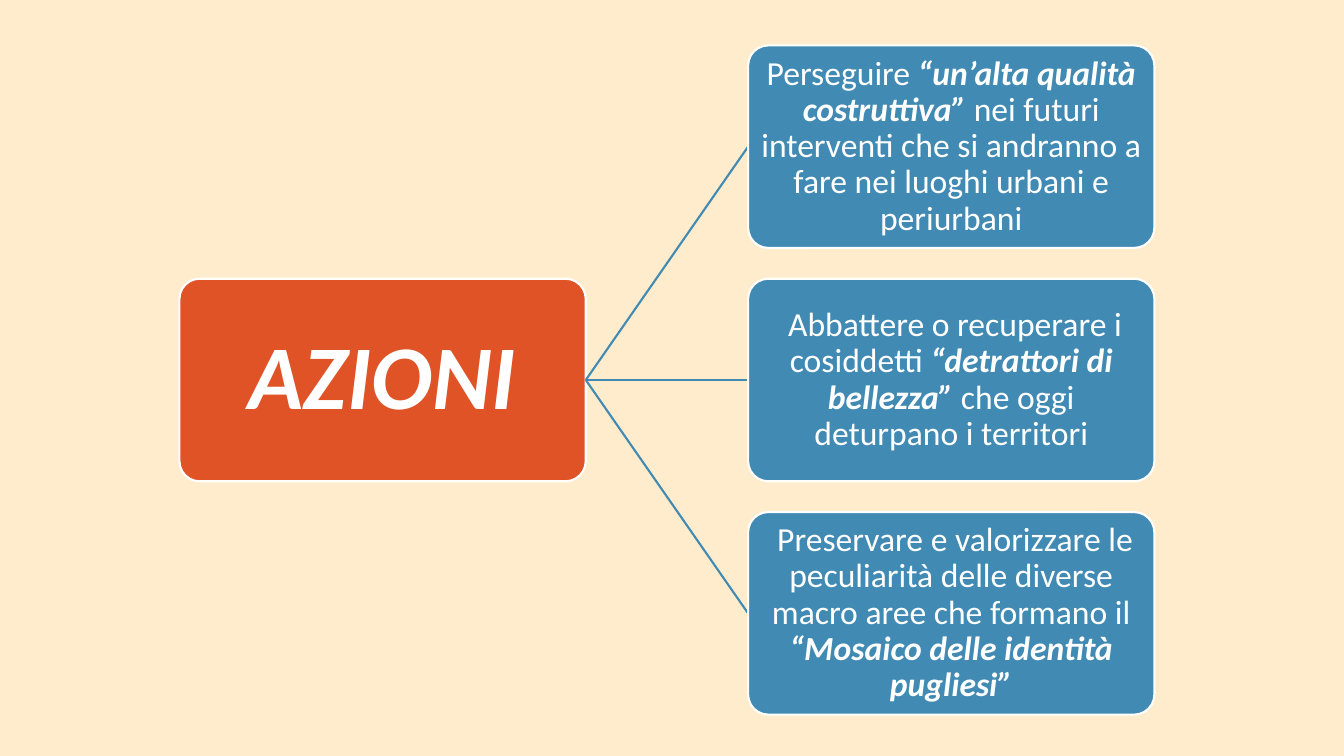
from dataclasses import dataclass

from lxml.etree import SubElement
from pptx import Presentation
from pptx.dml.color import RGBColor
from pptx.enum.shapes import MSO_CONNECTOR, MSO_SHAPE
from pptx.enum.text import MSO_ANCHOR, PP_ALIGN
from pptx.oxml.ns import qn
from pptx.shapes.autoshape import Shape
from pptx.shapes.connector import Connector
from pptx.util import Inches, Pt

CREAM, ORANGE, BLUE, WHITE = "FFECCC", "DF5327", "418AB3", "FFFFFF"
WIDTH, HEIGHT = 4.03, 2.01
LEFT, RIGHT = 1.78, 7.42
TOP, PITCH = 0.45, 2.315
MIDDLE = TOP + PITCH


@dataclass
class Box:
    left: float
    top: float
    fill: str
    inset: float = 0.02


@dataclass
class Action:
    before: str
    strong: str
    after: str = ""


ACTIONS = [
    Action("Perseguire ", "“un’alta qualità costruttiva” ",
           "nei futuri interventi che si andranno a fare nei luoghi urbani e periurbani"),
    Action(" Abbattere o recuperare i cosiddetti ", "“detrattori di bellezza” ",
           "che oggi deturpano i territori"),
    Action(" Preservare e valorizzare le peculiarità delle diverse macro aree che formano il ",
           "“Mosaico delle identità pugliesi”"),
]


def color(code: str) -> RGBColor:
    return RGBColor.from_string(code)


def write(shape: Shape, text: str, *, size: float = 24, strong: bool = False) -> None:
    """Append a run to the shape's only paragraph."""
    run = shape.text_frame.paragraphs[0].add_run()
    run.text = text
    font = run.font
    font.name, font.size = "Calibri", Pt(size)
    font.bold = font.italic = strong
    font.color.rgb = color(WHITE)


def draw_box(box: Box) -> Shape:
    shape = slide.shapes.add_shape(
        MSO_SHAPE.ROUNDED_RECTANGLE, Inches(box.left), Inches(box.top),
        Inches(WIDTH), Inches(HEIGHT))
    shape.adjustments[0] = 0.1
    shape.shadow.inherit = False
    shape.fill.solid()
    shape.fill.fore_color.rgb = color(box.fill)
    shape.line.color.rgb = color(WHITE)
    shape.line.width = Pt(1.5)
    frame = shape.text_frame
    frame.word_wrap = True
    frame.vertical_anchor = MSO_ANCHOR.MIDDLE
    frame.margin_left = frame.margin_right = Inches(box.inset)
    frame.margin_top = frame.margin_bottom = Inches(box.inset)
    frame.paragraphs[0].alignment = PP_ALIGN.CENTER
    frame.paragraphs[0].line_spacing = 0.9
    return shape


def draw_link(start: Shape) -> Connector:
    """Start a line at the right side of a box."""
    link = slide.shapes.add_connector(MSO_CONNECTOR.STRAIGHT, 0, 0, 0, 0)
    link.begin_connect(start, 3)
    link.line.color.rgb = color(BLUE)
    link.line.width = Pt(1.5)
    SubElement(link.element.spPr, qn("a:effectLst"))
    return link


# Slide and background
deck = Presentation()
deck.slide_width, deck.slide_height = Inches(13.33), Inches(7.5)
slide = deck.slides.add_slide(deck.slide_layouts[6])
slide.background.fill.solid()
slide.background.fill.fore_color.rgb = color(CREAM)

# Main topic
topic = draw_box(Box(LEFT, MIDDLE, ORANGE, inset=0.05))
write(topic, "AZIONI", size=65, strong=True)

# Actions, each line lying behind its box
for row, action in enumerate(ACTIONS):
    link = draw_link(topic)
    target = draw_box(Box(RIGHT, TOP + row * PITCH, BLUE))
    link.end_connect(target, 1)
    write(target, action.before)
    write(target, action.strong, strong=True)
    if action.after:
        write(target, action.after)

deck.save("out.pptx")
